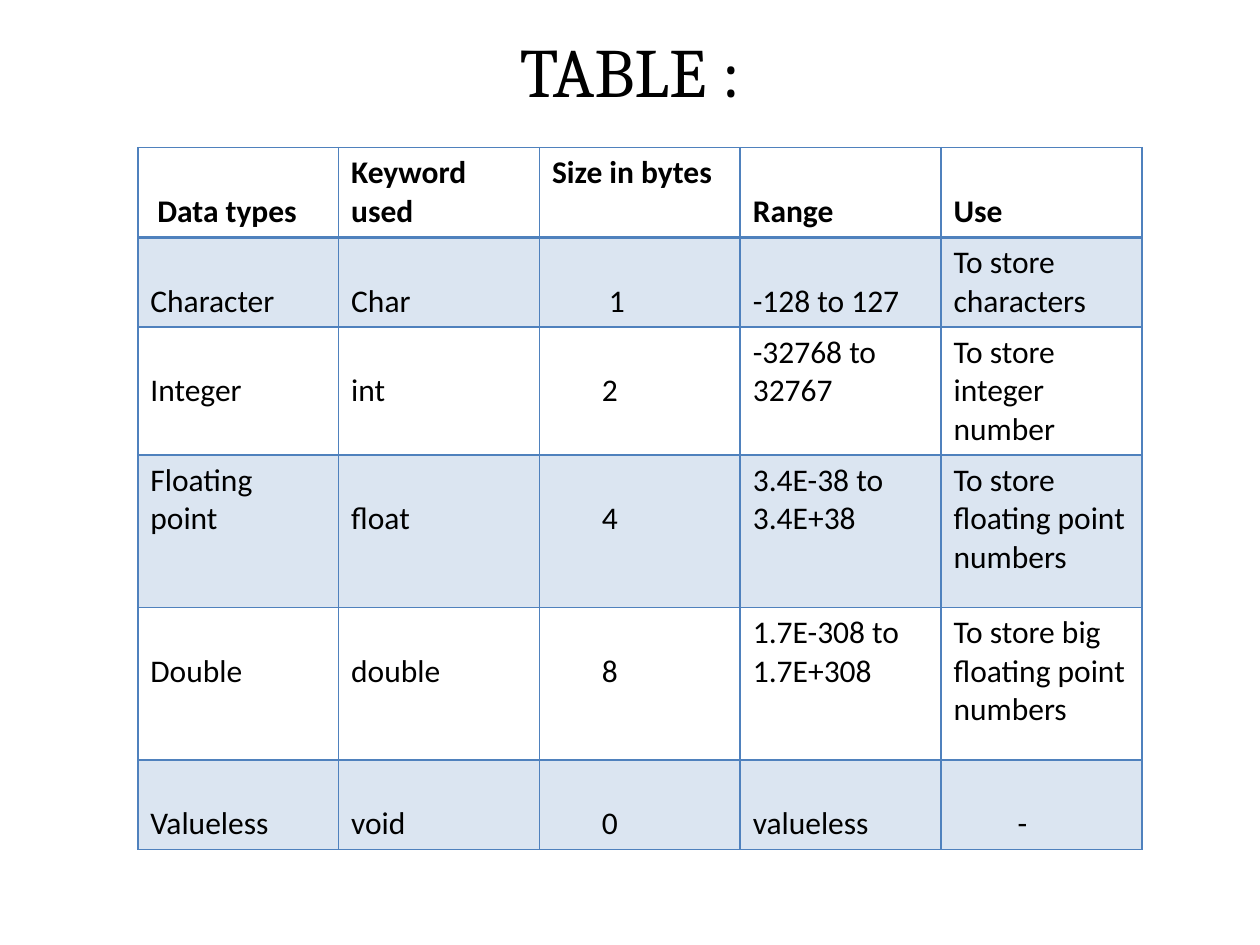
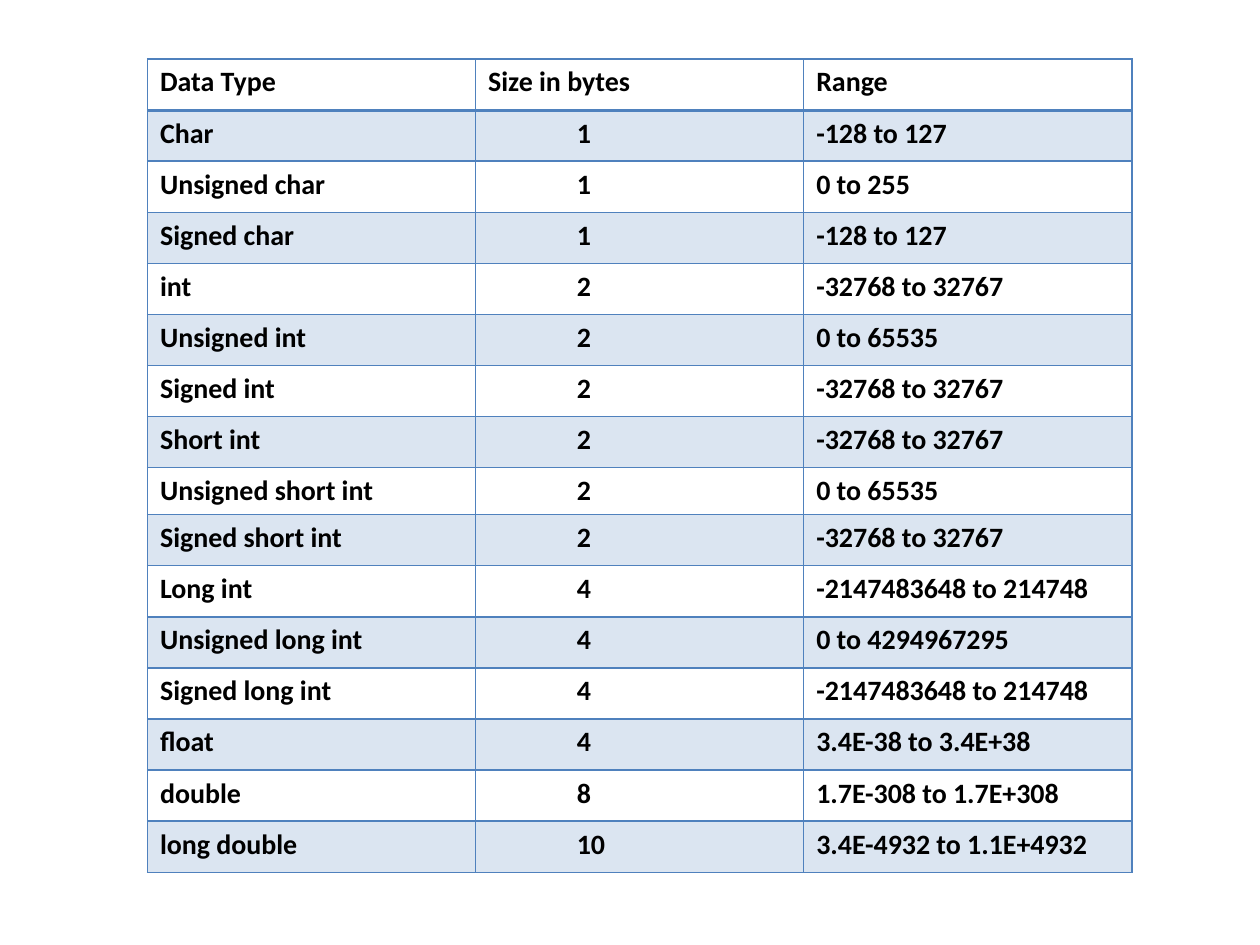
from dataclasses import dataclass

from lxml import etree
from pptx import Presentation
from pptx.dml.color import RGBColor
from pptx.enum.text import MSO_ANCHOR, MSO_AUTO_SIZE, PP_ALIGN
from pptx.oxml.ns import qn
from pptx.util import Pt

CENTER = PP_ALIGN.CENTER
MIDDLE = MSO_ANCHOR.MIDDLE
TOP = MSO_ANCHOR.TOP
NO_AUTOFIT = MSO_AUTO_SIZE.NONE

TITLE_ONLY_LAYOUT = 5
BLANK_LAYOUT = 6


@dataclass(frozen=True)
class Theme:
    title_font: str = "Cambria"
    body_font: str = "Calibri"
    ink: str = "000000"
    accent: str = "4F81BD"
    band_opacity: int = 20
    title_size: float = 39.6
    summary_size: float = 18
    detail_size: float = 16
    grid_line: float = 1
    header_line: float = 2
    margin_side: float = 7.2
    margin_edge: float = 3.6


@dataclass(frozen=True)
class Cell:
    text: str
    indent: float = 0
    drop: float = 0


class Deck:
    def __init__(self, presentation, theme):
        self.presentation = presentation
        self.theme = theme
        self.slide = None

    def add_slide(self, layout_index):
        layout = self.presentation.slide_layouts[layout_index]
        self.slide = self.presentation.slides.add_slide(layout)

    def style_text(self, text_frame, font_name, size, bold=False):
        for paragraph in text_frame.paragraphs:
            for run in paragraph.runs:
                run.font.name = font_name
                run.font.size = Pt(size)
                run.font.bold = bold
                run.font.color.rgb = RGBColor.from_string(self.theme.ink)

    def title(self, text, left, top, width, height):
        shape = self.slide.shapes.title
        shape.left, shape.top = Pt(left), Pt(top)
        shape.width, shape.height = Pt(width), Pt(height)
        text_frame = shape.text_frame
        text_frame.text = text
        text_frame.auto_size = NO_AUTOFIT
        text_frame.vertical_anchor = MIDDLE
        text_frame.paragraphs[0].alignment = CENTER
        self.style_text(text_frame, self.theme.title_font, self.theme.title_size)

    def table(self, rows, left, top, column_width, row_heights, size, all_bold=False):
        column_count = len(rows[0])
        frame = self.slide.shapes.add_table(
            len(rows), column_count, Pt(left), Pt(top),
            Pt(column_width * column_count), Pt(sum(row_heights)))
        table = frame.table
        table.first_row = False
        table.horz_banding = False
        for column in table.columns:
            column.width = Pt(column_width)
        for row_index, (row, height) in enumerate(zip(rows, row_heights)):
            table.rows[row_index].height = Pt(height)
            bold = all_bold or row_index == 0
            for column_index, content in enumerate(row):
                cell = table.cell(row_index, column_index)
                self.fill_cell(cell, content, size, bold)
                self.band_cell(cell, row_index)
                self.border_cell(cell, row_index)

    def fill_cell(self, cell, content, size, bold):
        cell.margin_left = Pt(self.theme.margin_side + content.indent)
        cell.margin_right = Pt(self.theme.margin_side)
        cell.margin_top = Pt(self.theme.margin_edge + content.drop)
        cell.margin_bottom = Pt(self.theme.margin_edge)
        cell.vertical_anchor = TOP
        cell.text_frame.text = content.text
        self.style_text(cell.text_frame, self.theme.body_font, size, bold)

    def band_cell(self, cell, row_index):
        if row_index % 2 == 0:
            cell.fill.background()
            return
        cell.fill.solid()
        cell.fill.fore_color.rgb = RGBColor.from_string(self.theme.accent)
        color = next(cell._tc.tcPr.iter(qn("a:srgbClr")))
        etree.SubElement(color, qn("a:alpha"), val=str(self.theme.band_opacity * 1000))

    def border_cell(self, cell, row_index):
        widths = dict.fromkeys(("lnL", "lnR", "lnT", "lnB"), self.theme.grid_line)
        if row_index == 0:
            widths["lnB"] = self.theme.header_line
        if row_index == 1:
            widths["lnT"] = self.theme.header_line
        for position, (side, width) in enumerate(widths.items()):
            line = etree.Element(qn(f"a:{side}"), w=str(Pt(width)))
            fill = etree.SubElement(line, qn("a:solidFill"))
            etree.SubElement(fill, qn("a:srgbClr"), val=self.theme.accent)
            cell._tc.tcPr.insert(position, line)


def second_line(text, indent=0):
    return Cell(text, indent, drop=22)


def build_summary(deck):
    deck.add_slide(TITLE_ONLY_LAYOUT)
    deck.title("TABLE :", 36, 12.24, 648, 55.4)
    rows = [
        [second_line("Data types", 4), Cell("Keyword used"), Cell("Size in bytes"),
         second_line("Range"), second_line("Use")],
        [second_line("Character"), second_line("Char"), second_line("1", 32.5),
         second_line("-128 to 127"), Cell("To store characters")],
        [second_line("Integer"), second_line("int"), second_line("2", 28.5),
         Cell("-32768 to\n32767"), Cell("To store integer number")],
        [Cell("Floating point"), second_line("float"), second_line("4", 28.5),
         Cell("3.4E-38 to 3.4E+38"), Cell("To store floating point numbers")],
        [second_line("Double"), second_line("double"), second_line("8", 28.5),
         Cell("1.7E-308 to 1.7E+308"), Cell("To store big floating point numbers")],
        [second_line("Valueless"), second_line("void"), second_line("0", 28.5),
         second_line("valueless"), second_line("-", 36.6)],
    ]
    heights = [51.2, 51.2, 73.1, 87.2, 87.2, 51.2]
    deck.table(rows, 78.75, 84.4, 114.75, heights, deck.theme.summary_size)


def build_details(deck):
    deck.add_slide(BLANK_LAYOUT)
    data_types = [
        ("Char", "1", "-128 to 127"),
        ("Unsigned char", "1", "0 to 255"),
        ("Signed char", "1", "-128 to 127"),
        ("int", "2", "-32768 to 32767"),
        ("Unsigned int", "2", "0 to 65535"),
        ("Signed int", "2", "-32768 to 32767"),
        ("Short int", "2", "-32768 to 32767"),
        ("Unsigned short int", "2", "0 to 65535"),
        ("Signed short int", "2", "-32768 to 32767"),
        ("Long int", "4", "-2147483648 to 214748"),
        ("Unsigned long int", "4", "0 to 4294967295"),
        ("Signed long int", "4", "-2147483648 to 214748"),
        ("float", "4", "3.4E-38 to 3.4E+38"),
        ("double", "8", "1.7E-308 to 1.7E+308"),
        ("long double", "10", "3.4E-4932 to 1.1E+4932"),
    ]
    rows = [[Cell("Data Type"), Cell("Size in bytes"), Cell("Range")]]
    rows += [[Cell(name), Cell(size, indent=50.6), Cell(value_range)]
             for name, size, value_range in data_types]
    heights = [26.7 if name.text == "Unsigned short int" else 29.2
               for name, *_ in rows]
    deck.table(rows, 84.3, 33.7, 187.5, heights, deck.theme.detail_size, all_bold=True)


def main():
    presentation = Presentation()
    presentation.slide_width = Pt(720)
    presentation.slide_height = Pt(540)
    deck = Deck(presentation, Theme())
    build_summary(deck)
    build_details(deck)
    presentation.save("out.pptx")


if __name__ == "__main__":
    main()
